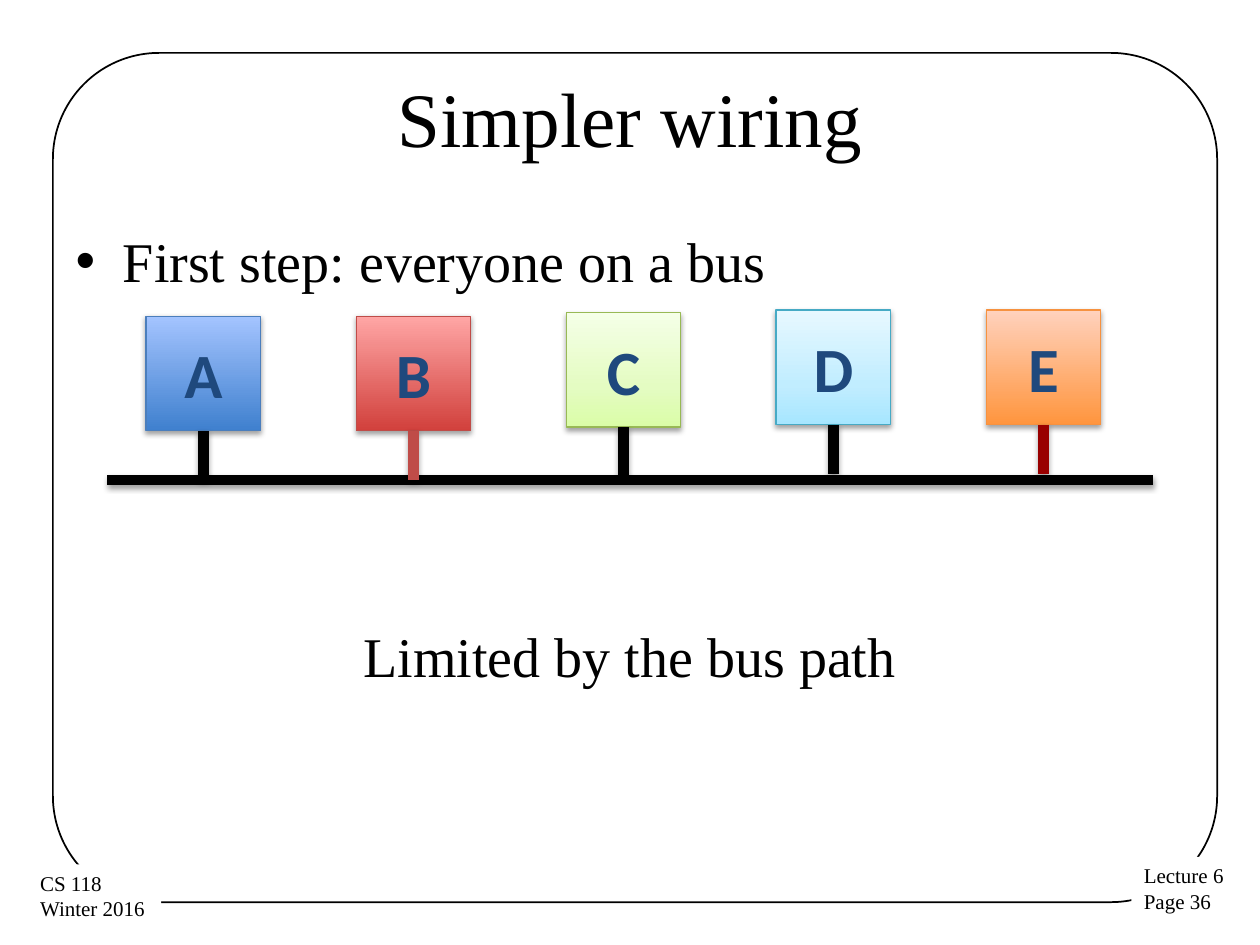
"""Build a slide of five nodes wired to one shared bus."""
from copy import deepcopy
from dataclasses import dataclass

from lxml.etree import SubElement
from pptx import Presentation
from pptx.dml.color import RGBColor
from pptx.enum.shapes import MSO_CONNECTOR, MSO_SHAPE
from pptx.enum.text import MSO_ANCHOR, MSO_AUTO_SIZE, PP_ALIGN
from pptx.oxml.ns import qn
from pptx.util import Inches, Pt

BLACK = RGBColor(0x00, 0x00, 0x00)
WHITE = RGBColor(0xFF, 0xFF, 0xFF)
NAVY = RGBColor(0x1F, 0x49, 0x7D)
RED = RGBColor(0xBF, 0x4C, 0x48)
MAROON = RGBColor(0x99, 0x00, 0x00)
BLUE = RGBColor(0x4B, 0x7E, 0xBC)
GREEN = RGBColor(0x98, 0xB9, 0x55)
TEAL = RGBColor(0x46, 0xAA, 0xC5)
ORANGE = RGBColor(0xF6, 0x92, 0x40)
BLUES = (RGBColor(0x3F, 0x80, 0xCE), RGBColor(0xA4, 0xC4, 0xFF))
REDS = (RGBColor(0xD1, 0x40, 0x3C), RGBColor(0xFF, 0xA6, 0xA5))
GREENS = (RGBColor(0xDA, 0xFD, 0xA7), RGBColor(0xE4, 0xFC, 0xC2), RGBColor(0xF5, 0xFF, 0xE7))
TEALS = (RGBColor(0xA7, 0xE6, 0xFF), RGBColor(0xC1, 0xED, 0xFF), RGBColor(0xE7, 0xF8, 0xFF))
ORANGES = (RGBColor(0xFF, 0x95, 0x3E), RGBColor(0xFF, 0xD2, 0xBD))

SERIF = "Times New Roman"
WIDTH, HEIGHT = Inches(10), Inches(7.5)
COL = WIDTH / 6
FIRST = Inches(1.16)
SIDE = Inches(0.91)
DROP = Inches(0.39)
BUS = Inches(3.81)


@dataclass
class Node:
    """A box on the bus."""
    name: str
    top: float
    fill: tuple[RGBColor, ...]
    edge: RGBColor
    wire: RGBColor = BLACK


@dataclass
class Label:
    """A corner note."""
    left: float
    top: float
    width: float
    text: str


NODES = (
    Node("A", 2.51, BLUES, BLUE),
    Node("B", 2.51, REDS, RED, RED),
    Node("C", 2.48, GREENS, GREEN),
    Node("D", 2.46, TEALS, TEAL),
    Node("E", 2.46, ORANGES, ORANGE, MAROON),
)
LABELS = (
    Label(8.98, 6.8, 0.84, "Lecture 6\nPage 36"),
    Label(0.22, 6.86, 1.06, "CS 118\nWinter 2016"),
)


def style(frame, size: float, font: str, color: RGBColor, bold: bool = False) -> None:
    """Format every run of a text frame."""
    for para in frame.paragraphs:
        for run in para.runs:
            run.font.size, run.font.name, run.font.bold = Pt(size), font, bold
            run.font.color.rgb = color


def shade(shape) -> None:
    """Cast a soft shadow straight down."""
    props = shape._element.spPr
    effect = props.find(qn("a:effectLst"))
    if effect is None:
        effect = SubElement(props, qn("a:effectLst"))
    cast = SubElement(effect, qn("a:outerShdw"), blurRad="40000", dist="21000",
                      dir="5400000", rotWithShape="0")
    color = SubElement(cast, qn("a:srgbClr"), val="000000")
    SubElement(color, qn("a:alpha"), val="37000")


def blend(shape, colors: tuple[RGBColor, ...]) -> None:
    """Fill a shape from bottom to top."""
    shape.fill.gradient()
    shape.fill.gradient_angle = 90
    stop = shape._element.spPr.find(".//" + qn("a:gs"))
    for _ in colors[2:]:
        stop.addnext(deepcopy(stop))
    places = (0, 0.35, 1) if len(colors) == 3 else (0, 1)
    for mark, color, place in zip(shape.fill.gradient_stops, colors, places):
        mark.color.rgb, mark.position = color, place


def wire(slide, start: tuple, end: tuple, color: RGBColor, box=None) -> None:
    """Draw a thick line, joined to the foot of a box if given."""
    line = slide.shapes.add_connector(
        MSO_CONNECTOR.STRAIGHT, *(int(n) for n in start + end))
    if box is not None:
        line.begin_connect(box, 2)
    line.line.width = Pt(6)
    line.line.color.rgb = color
    shade(line)


def draw(slide, node: Node, index: int) -> None:
    """Draw a node and its drop to the bus."""
    left, top = int(FIRST + index * COL), Inches(node.top)
    box = slide.shapes.add_shape(MSO_SHAPE.RECTANGLE, left, top, SIDE, SIDE)
    blend(box, node.fill)
    box.line.color.rgb, box.line.width = node.edge, Pt(0.75)
    box.shadow.inherit = False
    shade(box)
    frame = box.text_frame
    frame.text = node.name
    frame.vertical_anchor = MSO_ANCHOR.MIDDLE
    frame.paragraphs[0].alignment = PP_ALIGN.CENTER
    style(frame, 36, "Calibri", NAVY, True)
    mid, foot = left + SIDE / 2, top + SIDE
    wire(slide, (mid, foot), (mid, foot + DROP), node.wire, box)


def note(slide, label: Label) -> None:
    """Draw a corner note that covers the border."""
    box = slide.shapes.add_textbox(Inches(label.left), Inches(label.top),
                                   Inches(label.width), Inches(0.51))
    box.fill.solid()
    box.fill.fore_color.rgb = WHITE
    box.text_frame.word_wrap = False
    box.text_frame.text = label.text
    style(box.text_frame, 12, SERIF, BLACK)


def border(slide) -> None:
    """Draw the rounded page border."""
    edge = slide.shapes.add_shape(MSO_SHAPE.ROUNDED_RECTANGLE, Inches(0.42), Inches(0.42),
                                  Inches(9.24), Inches(6.74))
    edge.adjustments[0] = 0.125
    edge.fill.background()
    edge.line.color.rgb, edge.line.width = BLACK, Pt(1)
    edge.shadow.inherit = False


def words(slide) -> None:
    """Fill the title and body above the border."""
    title, body = slide.placeholders
    for holder, top, height in ((title, 0.04, 1.25), (body, 1.75 / 7.5, 4.95)):
        holder.left, holder.top = int(WIDTH * 0.05), int(HEIGHT * top)
        holder.width, holder.height = int(WIDTH * 0.9), Inches(height)
        slide.shapes._spTree.append(holder._element)
        holder.text_frame.auto_size = MSO_AUTO_SIZE.NONE
    title.text_frame.text = "Simpler wiring"
    title.text_frame.vertical_anchor = MSO_ANCHOR.MIDDLE
    style(title.text_frame, 44, SERIF, BLACK)
    body.text_frame.text = "First step: everyone on a bus\nLimited by the bus path"
    last = body.text_frame.paragraphs[1]
    last.alignment, last.space_before = PP_ALIGN.CENTER, Pt(187)
    props = last._p.get_or_add_pPr()
    props.set("marL", "0")
    props.set("indent", "0")
    SubElement(props, qn("a:buNone"))
    style(body.text_frame, 32, SERIF, BLACK)


def main() -> None:
    """Build and save the slide."""
    deck = Presentation()
    deck.slide_width, deck.slide_height = WIDTH, HEIGHT
    slide = deck.slides.add_slide(deck.slide_layouts[1])
    border(slide)
    for label in LABELS:
        note(slide, label)
    words(slide)
    wire(slide, (WIDTH * 0.085, BUS), (WIDTH * 0.915, BUS), BLACK)
    for index, node in enumerate(NODES):
        draw(slide, node, index)
    deck.save("out.pptx")


if __name__ == "__main__":
    main()
